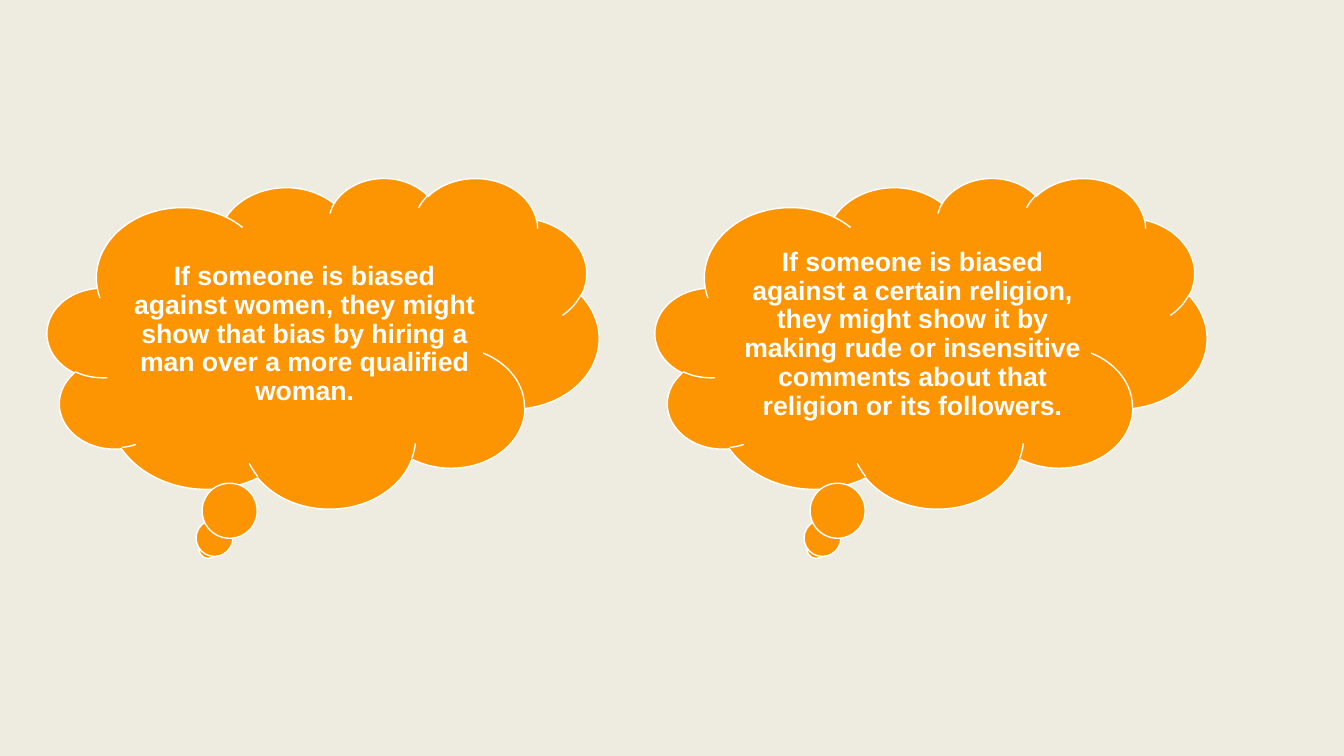
from pptx import Presentation
from pptx.dml.color import RGBColor
from pptx.enum.shapes import MSO_SHAPE
from pptx.enum.text import MSO_ANCHOR, PP_ALIGN
from pptx.util import Inches, Pt

CLOUD = MSO_SHAPE.CLOUD_CALLOUT
MIDDLE = MSO_ANCHOR.MIDDLE
CENTER = PP_ALIGN.CENTER

EXAMPLES = [
    "If someone is biased against women, they might show that bias by hiring "
    "a man over a more qualified woman.",
    "If someone is biased against a certain religion, they might show it by "
    "making rude or insensitive comments about that religion or its followers.",
]
BACKGROUND, ORANGE, WHITE = "EEECE1", "FD9401", "FFFFFF"

FIRST_LEFT, CLOUD_TOP, CLOUD_PITCH = 0.47, 1.76, 6.03
CLOUD_WIDTH, CLOUD_HEIGHT = 5.47, 3.28
TEXT_INDENT, TEXT_DROP = 0.76, 0.49
TEXT_WIDTH, TEXT_HEIGHT = 3.58, 2.14
TEXT_MARGIN = 0.08


def color(hex_string):
    return RGBColor.from_string(hex_string)


def add_cloud(slide, left):
    cloud = slide.shapes.add_shape(
        CLOUD, Inches(left), Inches(CLOUD_TOP),
        Inches(CLOUD_WIDTH), Inches(CLOUD_HEIGHT))
    cloud.shadow.inherit = False
    cloud.fill.solid()
    cloud.fill.fore_color.rgb = color(ORANGE)
    cloud.line.color.rgb = color(WHITE)
    cloud.line.width = Pt(1)


def add_example(slide, left, text):
    box = slide.shapes.add_textbox(
        Inches(left + TEXT_INDENT), Inches(CLOUD_TOP + TEXT_DROP),
        Inches(TEXT_WIDTH), Inches(TEXT_HEIGHT))
    frame = box.text_frame
    frame.word_wrap = True
    frame.vertical_anchor = MIDDLE
    frame.margin_left = frame.margin_right = Inches(TEXT_MARGIN)
    frame.margin_top = frame.margin_bottom = Inches(TEXT_MARGIN)
    paragraph = frame.paragraphs[0]
    paragraph.alignment = CENTER
    paragraph.line_spacing = 0.9
    run = paragraph.add_run()
    run.text = text
    run.font.name = "Arial"
    run.font.size = Pt(19)
    run.font.bold = True
    run.font.color.rgb = color(WHITE)


def main():
    presentation = Presentation()
    presentation.slide_width = Inches(13.33)
    presentation.slide_height = Inches(7.5)
    slide = presentation.slides.add_slide(presentation.slide_layouts[6])
    slide.background.fill.solid()
    slide.background.fill.fore_color.rgb = color(BACKGROUND)
    for index, text in enumerate(EXAMPLES):
        left = FIRST_LEFT + index * CLOUD_PITCH
        add_cloud(slide, left)
        add_example(slide, left, text)
    presentation.save("out.pptx")


if __name__ == "__main__":
    main()
